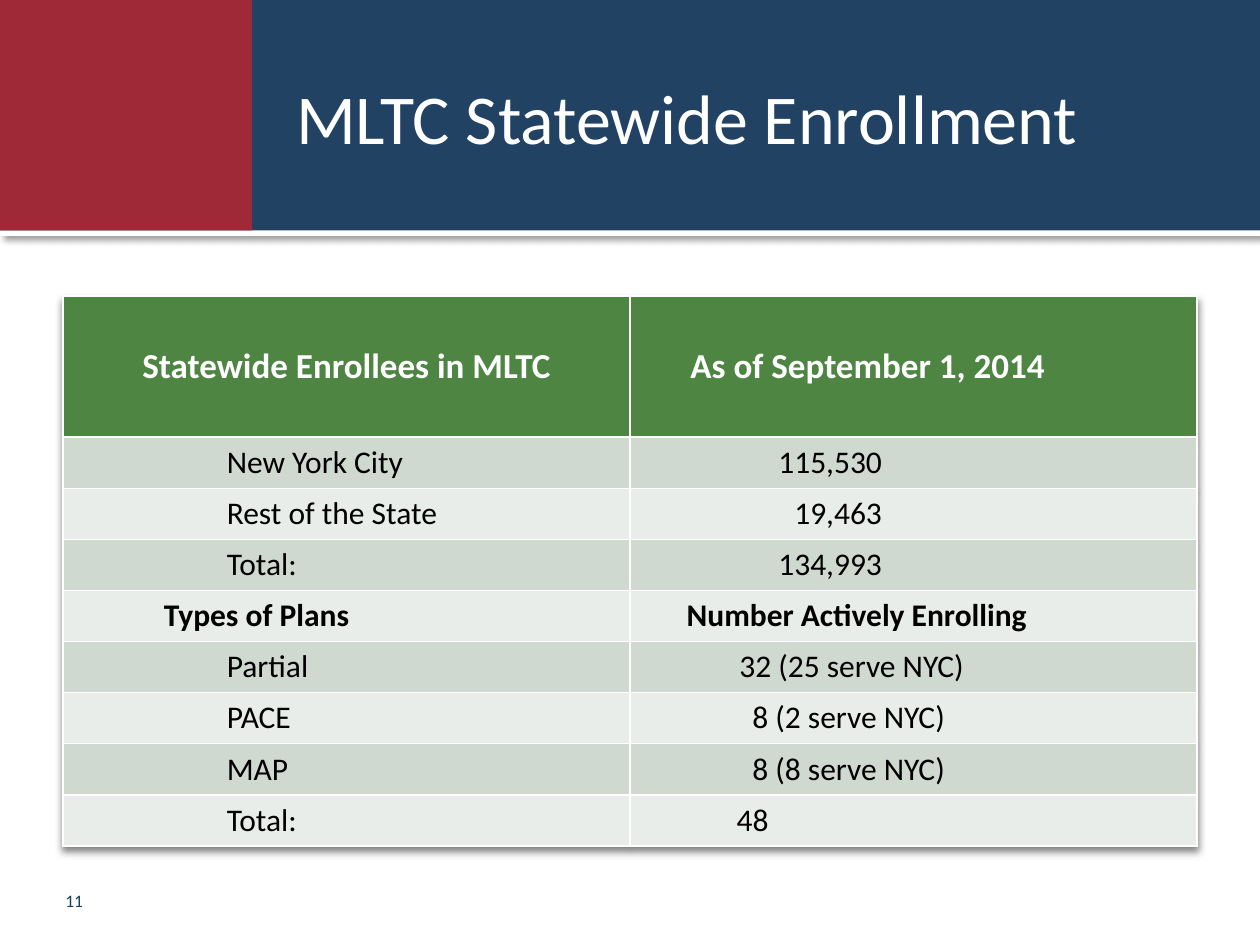
from lxml.etree import SubElement
from pptx import Presentation
from pptx.dml.color import RGBColor
from pptx.enum.shapes import MSO_CONNECTOR, MSO_SHAPE
from pptx.enum.text import MSO_ANCHOR, PP_ALIGN
from pptx.oxml import parse_xml
from pptx.oxml.ns import nsdecls
from pptx.util import Inches, Pt


def format_text(text_frame, size, color, bold=False, alignment=PP_ALIGN.LEFT):
    paragraph = text_frame.paragraphs[0]
    paragraph.alignment = alignment
    font = paragraph.runs[0].font
    font.name = "Calibri"
    font.size = Pt(size)
    font.bold = bold
    font.color.rgb = RGBColor.from_string(color)


def shadow_effect(opacity, distance, angle):
    return parse_xml(
        f'<a:effectLst {nsdecls("a")}><a:outerShdw blurRad="{Pt(4)}" '
        f'dist="{Pt(distance)}" dir="{angle * 60000}" rotWithShape="0">'
        f'<a:srgbClr val="000000"><a:alpha val="{opacity * 1000}"/></a:srgbClr>'
        '</a:outerShdw></a:effectLst>'
    )


presentation = Presentation()
presentation.slide_width = Inches(10)
presentation.slide_height = Inches(7.5)
slide = presentation.slides.add_slide(presentation.slide_layouts[5])
shapes = slide.shapes

rule = shapes.add_connector(
    MSO_CONNECTOR.STRAIGHT, Inches(0), Inches(1.83), Inches(10), Inches(1.83)
)
rule.line.color.rgb = RGBColor.from_string("FFFFFF")
rule.line.width = Pt(6)
rule._element.spPr.append(shadow_effect(40, 3, 45))

for width, color in [(10, "214263"), (2, "9F2936")]:
    band = shapes.add_shape(
        MSO_SHAPE.RECTANGLE, Inches(0), Inches(0), Inches(width), Inches(1.83)
    )
    band.shadow.inherit = False
    band.fill.solid()
    band.fill.fore_color.rgb = RGBColor.from_string(color)
    band.line.fill.background()

title = shapes.title
title.left, title.top = Inches(2.25), Inches(0.3)
title.width, title.height = Inches(7.25), Inches(1.25)
title.text_frame.text = "MLTC Statewide Enrollment"
title.text_frame.vertical_anchor = MSO_ANCHOR.MIDDLE
format_text(title.text_frame, 40, "FFFFFF")
shapes._spTree.append(title._element)

LEFT, CENTER, RIGHT = PP_ALIGN.LEFT, PP_ALIGN.CENTER, PP_ALIGN.RIGHT
rows = [
    (("Statewide Enrollees in MLTC", CENTER, 0.1, 0.1),
     ("As of September 1, 2014", LEFT, 0.48, 0.1)),
    (("New York City", LEFT, 1.3, 0.1), ("115,530", RIGHT, 1.1, 2.5)),
    (("Rest of the State", LEFT, 1.3, 0.1), ("19,463", RIGHT, 1.1, 2.5)),
    (("Total:", LEFT, 1.3, 0.1), ("134,993", RIGHT, 0.1, 2.5)),
    (("Types of Plans", LEFT, 0.8, 0.1),
     ("Number Actively Enrolling", LEFT, 0.45, 1)),
    (("Partial", LEFT, 1.3, 0.1), ("32 (25 serve NYC)", RIGHT, 0, 1.85)),
    (("PACE", LEFT, 1.3, 0.1), ("8 (2 serve NYC)", RIGHT, 0, 2)),
    (("MAP", LEFT, 1.3, 0.1), ("8 (8 serve NYC)", RIGHT, 0, 2)),
    (("Total:", LEFT, 1.3, 0.1), ("48", RIGHT, 0.1, 3.4)),
]
table = shapes.add_table(
    len(rows), 2, Inches(0.5), Inches(2.35), Inches(9), Inches(4.35)
).table
table._tbl.tblPr.insert(0, shadow_effect(50, 3, 90))

for row_index, row in enumerate(rows):
    is_header = row_index == 0
    is_heading = row_index in (0, 4)
    table.rows[row_index].height = Inches(1.12 if is_header else 0.4)
    band_color = "D0D9CF" if row_index % 2 else "E9EDE9"
    for column_index, (text, alignment, left, right) in enumerate(row):
        cell = table.cell(row_index, column_index)
        cell.text_frame.text = text
        cell.margin_left, cell.margin_right = Inches(left), Inches(right)
        cell.vertical_anchor = MSO_ANCHOR.MIDDLE if is_header else MSO_ANCHOR.TOP
        cell.fill.solid()
        cell.fill.fore_color.rgb = RGBColor.from_string(
            "4E8542" if is_header else band_color
        )
        format_text(
            cell.text_frame,
            20 if is_header else 18,
            "FFFFFF" if is_header else "000000",
            is_heading,
            alignment,
        )

page_number = shapes.add_textbox(Inches(0.42), Inches(6.95), Inches(9.17), Inches(0.4))
page_number.text_frame.word_wrap = True
page_number.text_frame.vertical_anchor = MSO_ANCHOR.MIDDLE
page_number.text_frame.text = "11"
format_text(page_number.text_frame, 10, "14425D")

presentation.save("out.pptx")
